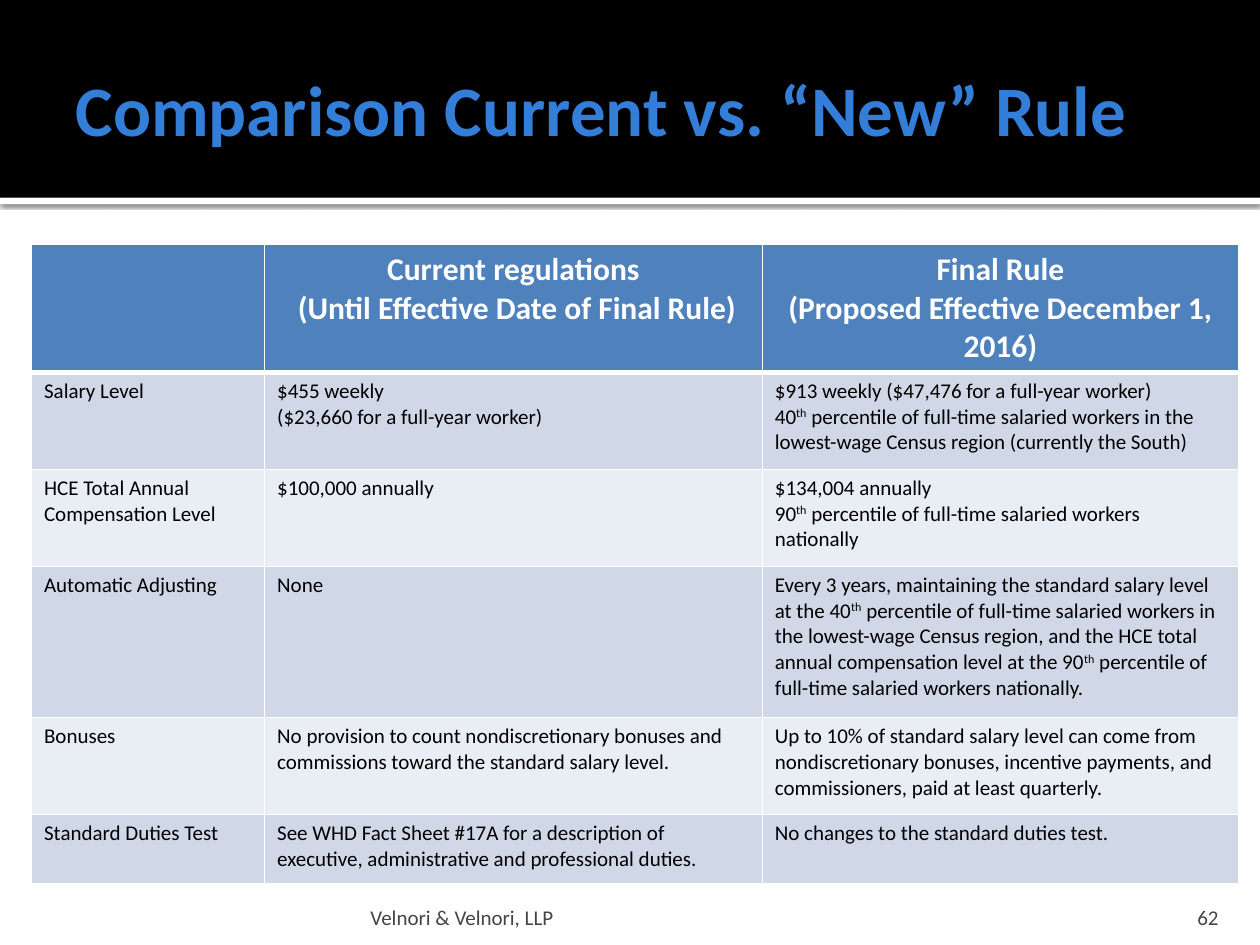
from dataclasses import dataclass

from lxml import etree
from pptx import Presentation
from pptx.dml.color import RGBColor
from pptx.enum.shapes import MSO_SHAPE
from pptx.enum.text import MSO_ANCHOR, PP_ALIGN
from pptx.oxml import parse_xml
from pptx.oxml.ns import nsdecls, qn
from pptx.util import Inches, Pt

RECTANGLE = MSO_SHAPE.RECTANGLE
MIDDLE, BOTTOM = MSO_ANCHOR.MIDDLE, MSO_ANCHOR.BOTTOM
LEFT, CENTER, RIGHT = PP_ALIGN.LEFT, PP_ALIGN.CENTER, PP_ALIGN.RIGHT
TITLE_ONLY = 5


@dataclass(frozen=True)
class Theme:
    font: str = "Calibri"
    white: str = "FFFFFF"
    black: str = "000000"
    title: str = "337ED9"
    header: str = "4F81BD"
    bands: tuple = ("D0D8E8", "E9EDF4")
    footer: str = "454545"
    title_size: float = 40.5
    header_size: float = 18
    body_size: float = 12
    rule: float = 1
    header_rule: float = 3


THEME = Theme()

# Shares of the slide
WIDTH, HEIGHT = Inches(10), Inches(7.5)
BAND_SHARE = 1.57 / 7.5
EDGE_SHARE = 0.05 / 7.5

COLUMN_WIDTHS = (1.85, 3.95, 3.78)
ROW_HEIGHTS = (0.77, 0.77, 0.77, 1.2, 0.77, 0.55)

# A new line starts a paragraph; carets enclose superscript
ROWS = (
    ("",
     "Current regulations\n (Until Effective Date of Final Rule)",
     "Final Rule\n(Proposed Effective December 1, 2016)"),
    ("Salary Level",
     "$455 weekly\n($23,660 for a full-year worker)",
     "$913 weekly ($47,476 for a full-year worker)\n"
     "40^th^ percentile of full-time salaried workers in the "
     "lowest-wage Census region (currently the South)"),
    ("HCE Total Annual Compensation Level",
     "$100,000 annually",
     "$134,004 annually\n"
     "90^th^ percentile of full-time salaried workers nationally"),
    ("Automatic Adjusting",
     "None",
     "Every 3 years, maintaining the standard salary level at the 40^th^ "
     "percentile of full-time salaried workers in the lowest-wage Census "
     "region, and the HCE total annual compensation level at the 90^th^ "
     "percentile of full-time salaried workers nationally."),
    ("Bonuses",
     "No provision to count nondiscretionary bonuses and commissions toward "
     "the standard salary level.",
     "Up to 10% of standard salary level can come from nondiscretionary "
     "bonuses, incentive payments, and commissioners, paid at least quarterly."),
    ("Standard Duties Test",
     "See WHD Fact Sheet #17A for a description of executive, administrative "
     "and professional duties.",
     "No changes to the standard duties test."),
)


def style_font(font, size, color, bold=False):
    font.name = THEME.font
    font.size = Pt(size)
    font.bold = bold
    font.color.rgb = RGBColor.from_string(color)


def set_margins(frame, left, top, right, bottom):
    frame.margin_left, frame.margin_top = Inches(left), Inches(top)
    frame.margin_right, frame.margin_bottom = Inches(right), Inches(bottom)


def add_band(slide, top, height, color):
    band = slide.shapes.add_shape(RECTANGLE, 0, top, WIDTH, height)
    band.shadow.inherit = False
    band.fill.solid()
    band.fill.fore_color.rgb = RGBColor.from_string(color)
    band.line.fill.background()
    return band


def add_shadow(band):
    effects = band.element.spPr.find(qn("a:effectLst"))
    effects.append(parse_xml(
        f'<a:outerShdw {nsdecls("a")} blurRad="{Pt(2.5)}" dist="{Pt(0.8)}" '
        f'dir="5400000" algn="tl" rotWithShape="0">'
        f'<a:srgbClr val="{THEME.black}"><a:alpha val="60000"/></a:srgbClr>'
        f'</a:outerShdw>'))


def set_title(slide, text):
    title = slide.shapes.title
    title.left, title.top = Inches(0.5), Inches(0.17)
    title.width, title.height = Inches(9), Inches(1.37)
    frame = title.text_frame
    frame.text = text
    frame.vertical_anchor = MIDDLE
    set_margins(frame, 0.1, 0.05, 0.05, 0.05)
    line = frame.paragraphs[0]
    line.alignment = LEFT
    style_font(line.runs[0].font, THEME.title_size, THEME.title, True)
    # Bring the title in front of the bands
    title.element.getparent().append(title.element)


def write_paragraph(paragraph, text, size, color, bold, align):
    paragraph.alignment = align
    style_font(paragraph.font, size, color, bold)
    for index, part in enumerate(text.split("^")):
        run = paragraph.add_run()
        run.text = part
        style_font(run.font, size, color, bold)
        if index % 2:
            run.font._element.set("baseline", "30000")


def set_borders(cell, top, bottom):
    properties = cell._tc.get_or_add_tcPr()
    widths = {"lnL": THEME.rule, "lnR": THEME.rule, "lnT": top, "lnB": bottom}
    for index, (side, width) in enumerate(widths.items()):
        border = etree.Element(qn(f"a:{side}"), w=str(Pt(width)))
        fill = etree.SubElement(border, qn("a:solidFill"))
        etree.SubElement(fill, qn("a:srgbClr"), val=THEME.white)
        properties.insert(index, border)


def fill_cell(cell, text, row):
    is_header = row == 0
    cell.fill.solid()
    cell.fill.fore_color.rgb = RGBColor.from_string(
        THEME.header if is_header else THEME.bands[(row - 1) % 2])
    set_borders(cell, THEME.header_rule if row == 1 else THEME.rule,
                THEME.header_rule if is_header else THEME.rule)
    if not text:
        return
    look = ((THEME.header_size, THEME.white, True, CENTER) if is_header
            else (THEME.body_size, THEME.black, False, LEFT))
    frame = cell.text_frame
    for index, line in enumerate(text.split("\n")):
        paragraph = frame.add_paragraph() if index else frame.paragraphs[0]
        write_paragraph(paragraph, line, *look)


def add_comparison(slide):
    table = slide.shapes.add_table(
        len(ROWS), len(COLUMN_WIDTHS), Inches(0.25), Inches(1.94),
        Inches(sum(COLUMN_WIDTHS)), Inches(sum(ROW_HEIGHTS))).table
    for column, width in zip(table.columns, COLUMN_WIDTHS):
        column.width = Inches(width)
    for row, (height, texts) in enumerate(zip(ROW_HEIGHTS, ROWS)):
        table.rows[row].height = Inches(height)
        for column, text in enumerate(texts):
            fill_cell(table.cell(row, column), text, row)


def add_footer(slide, text, left, width, side_margin, align):
    footer = slide.shapes.add_textbox(
        Inches(left), Inches(7.08), Inches(width), Inches(0.3))
    frame = footer.text_frame
    frame.text = text
    frame.word_wrap = True
    frame.vertical_anchor = BOTTOM
    set_margins(frame, side_margin, 0.05, side_margin, 0)
    line = frame.paragraphs[0]
    line.alignment = align
    style_font(line.runs[0].font, THEME.body_size, THEME.footer)


def main():
    deck = Presentation()
    deck.slide_width, deck.slide_height = WIDTH, HEIGHT
    slide = deck.slides.add_slide(deck.slide_layouts[TITLE_ONLY])

    # Title band with its shadowed lower edge
    band_height = int(HEIGHT * BAND_SHARE)
    add_shadow(add_band(slide, band_height, int(HEIGHT * EDGE_SHARE), THEME.white))
    add_band(slide, 0, band_height, THEME.black)
    set_title(slide, "Comparison Current vs. “New” Rule")

    # Comparison of the rules
    add_comparison(slide)

    # Firm and page number
    add_footer(slide, "Velnori & Velnori, LLP", 2.89, 6.02, 0.05, LEFT)
    add_footer(slide, "62", 8.97, 0.8, 0.1, RIGHT)
    deck.save("out.pptx")


if __name__ == "__main__":
    main()
